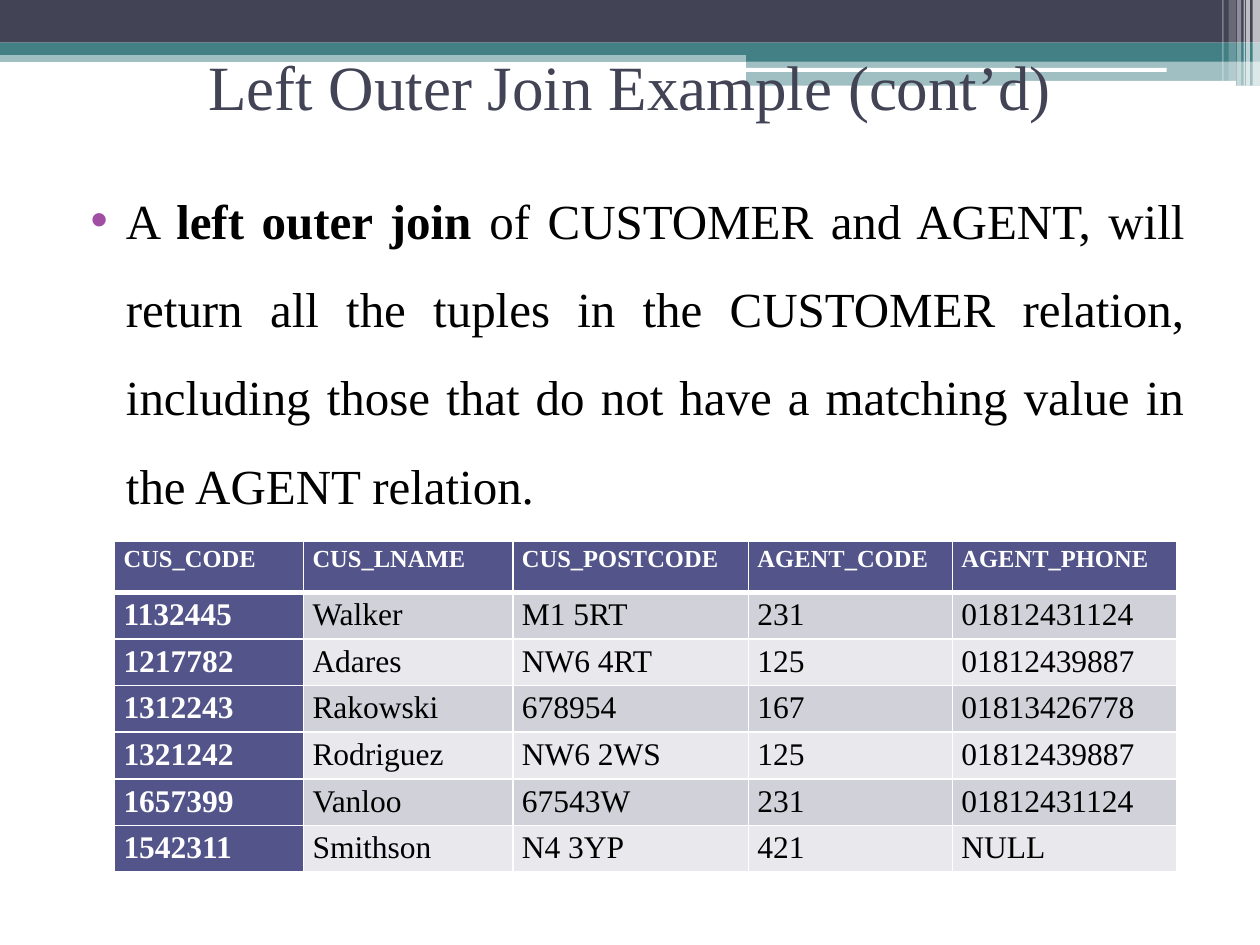
"""Build the left outer join example slide."""
import pptx
import pptx.dml.color
import pptx.enum.shapes
import pptx.enum.text
import pptx.oxml
import pptx.oxml.ns
import pptx.util

Cm, Pt = pptx.util.Cm, pptx.util.Pt
RGBColor = pptx.dml.color.RGBColor
MSO_SHAPE = pptx.enum.shapes.MSO_SHAPE
MSO_ANCHOR = pptx.enum.text.MSO_ANCHOR
PP_ALIGN = pptx.enum.text.PP_ALIGN

SLATE = RGBColor(0x42, 0x44, 0x56)
TEAL = RGBColor(0x43, 0x80, 0x86)
INDIGO = RGBColor(0x53, 0x54, 0x8A)
PURPLE = RGBColor(0xA0, 0x4D, 0xA3)
BAND_DARK = RGBColor(0xD1, 0xD1, 0xDA)
BAND_LIGHT = RGBColor(0xE9, 0xE9, 0xED)
WHITE = RGBColor(0xFF, 0xFF, 0xFF)
BLACK = RGBColor(0x00, 0x00, 0x00)

BARS = [
    (0, 1.02, 25.4, 0.23, TEAL, 50),
    (0, 0, 25.4, 0.86, SLATE, 100),
    (0, 0.86, 25.4, 0.25, TEAL, 100),
    (15.04, 0.99, 10.36, 0.25, TEAL, 100),
    (15.04, 1.22, 10.36, 0.51, TEAL, 50),
]
RULES = [(15.01, 1.37, 8.51, 0.08), (20.47, 1.63, 4.45, 0.1)]
STRIPES = [
    (25.25, 0.15, 1.73, 65),
    (25.12, 0.08, 1.73, 65),
    (25.07, 0.03, 1.73, 60),
    (24.94, 0.08, 1.73, 40),
    (24.77, 0.15, 1.63, 20),
    (24.64, 0.03, 1.63, 30),
]
BODY = [
    ("A ", False),
    ("left outer join ", True),
    ("of CUSTOMER and AGENT, will return all the tuples in the CUSTOMER relation, "
     "including those that do not have a matching value in the AGENT relation.", False),
]
COLUMNS = [3.81, 4.22, 4.75, 4.11, 4.52]
ROWS = [
    ("CUS_CODE", "CUS_LNAME", "CUS_POSTCODE", "AGENT_CODE", "AGENT_PHONE"),
    ("1132445", "Walker", "M1 5RT", "231", "01812431124"),
    ("1217782", "Adares", "NW6 4RT", "125", "01812439887"),
    ("1312243", "Rakowski", "678954", "167", "01813426778"),
    ("1321242", "Rodriguez", "NW6 2WS", "125", "01812439887"),
    ("1657399", "Vanloo", "67543W", "231", "01812431124"),
    ("1542311", "Smithson", "N4 3YP", "421", "NULL"),
]


def element(tag, attrs="", inner=""):
    return pptx.oxml.parse_xml(f"<a:{tag} {pptx.oxml.ns.nsdecls('a')} {attrs}>{inner}</a:{tag}>")


def assign(obj, values):
    for name, value in values.items():
        setattr(obj, name, value)


class Deck:
    def __init__(self, prs, font):
        self.font = font
        self.slide = prs.slides.add_slide(prs.slide_layouts[6])

    def bar(self, x, y, w, h, color, opacity=100, kind=MSO_SHAPE.RECTANGLE):
        sp = self.slide.shapes.add_shape(kind, Cm(x), Cm(y), Cm(w), Cm(h))
        sp.shadow.inherit = False
        sp.line.fill.background()
        sp.fill.solid()
        sp.fill.fore_color.rgb = color
        if opacity < 100:
            clr = sp.element.xpath("./p:spPr/a:solidFill/a:srgbClr")[0]
            clr.append(element("alpha", f'val="{opacity * 1000}"'))

    def runs(self, p, parts, size, color):
        for text, bold in parts:
            r = p.add_run()
            r.text = text
            assign(r.font, {"name": self.font, "size": Pt(size), "bold": bold})
            r.font.color.rgb = color

    def text(self, x, y, w, h, parts, size, color, anchor, paragraph):
        sp = self.slide.shapes.add_textbox(Cm(x), Cm(y), Cm(w), Cm(h))
        tf = sp.text_frame
        assign(tf, {"word_wrap": True, "vertical_anchor": anchor})
        p = tf.paragraphs[0]
        assign(p, paragraph)
        self.runs(p, parts, size, color)
        return sp

    def bullet(self, sp, color, margin, indent):
        for pPr in sp.element.xpath(".//a:pPr"):
            pPr.set("marL", str(Cm(margin)))
            pPr.set("indent", str(Cm(indent)))
            pPr.append(element("buClr", inner=f'<a:srgbClr val="{color}"/>'))
            pPr.append(element("buFont", 'typeface="Arial"'))
            pPr.append(element("buChar", 'char="•"'))

    def borders(self, tc, header):
        tcPr = tc.get_or_add_tcPr()
        for side in "LRTB":
            width = Pt(3 if header and side == "B" else 1)
            tcPr.append(element(f"ln{side}", f'w="{width}"',
                                f'<a:solidFill><a:srgbClr val="{WHITE}"/></a:solidFill>'))

    def table(self, x, y, columns, header_height, row_height, rows):
        heights = [header_height] + [row_height] * (len(rows) - 1)
        frame = self.slide.shapes.add_table(len(rows), len(columns), Cm(x), Cm(y),
                                            Cm(sum(columns)), Cm(sum(heights)))
        for column, width in zip(frame.table.columns, columns):
            column.width = Cm(width)
        for row, height in zip(frame.table.rows, heights):
            row.height = Cm(height)
        for i, tc in enumerate(frame.element.xpath(".//a:tc")):
            self.borders(tc, i < len(columns))
        for i, row in enumerate(rows):
            for j, text in enumerate(row):
                heading = i == 0 or j == 0
                cell = frame.table.cell(i, j)
                assign(cell, {"margin_left": Cm(0.18), "margin_right": Cm(0.18),
                              "margin_top": 0, "margin_bottom": 0})
                cell.fill.solid()
                band = BAND_DARK if i % 2 else BAND_LIGHT
                cell.fill.fore_color.rgb = INDIGO if heading else band
                p = cell.text_frame.paragraphs[0]
                p.line_spacing = 1.15
                self.runs(p, [(text, heading)], 18 if i else 14, WHITE if heading else BLACK)


def main():
    prs = pptx.Presentation()
    assign(prs, {"slide_width": Cm(25.4), "slide_height": Cm(19.05)})
    s = Deck(prs, "Times New Roman")
    for bar in BARS:
        s.bar(*bar)
    for rule in RULES:
        s.bar(*rule, WHITE, kind=MSO_SHAPE.ROUNDED_RECTANGLE)
    for x, w, h, opacity in STRIPES:
        s.bar(x, 0, w, h, WHITE, opacity)
    s.text(1.27, 1.12, 22.86, 1.19, [("Left Outer Join Example (cont’d)", False)], 36, SLATE,
           MSO_ANCHOR.MIDDLE, {"alignment": PP_ALIGN.CENTER})
    body = s.text(1.27, 3.12, 22.86, 15.14, BODY, 28, BLACK, MSO_ANCHOR.TOP,
                  {"alignment": PP_ALIGN.JUSTIFY, "line_spacing": 1.5, "space_before": Pt(3)})
    s.bullet(body, PURPLE, 1.02, -0.71)
    s.table(2.31, 10.92, COLUMNS, 1.02, 0.94, ROWS)
    prs.save("out.pptx")


if __name__ == "__main__":
    main()
